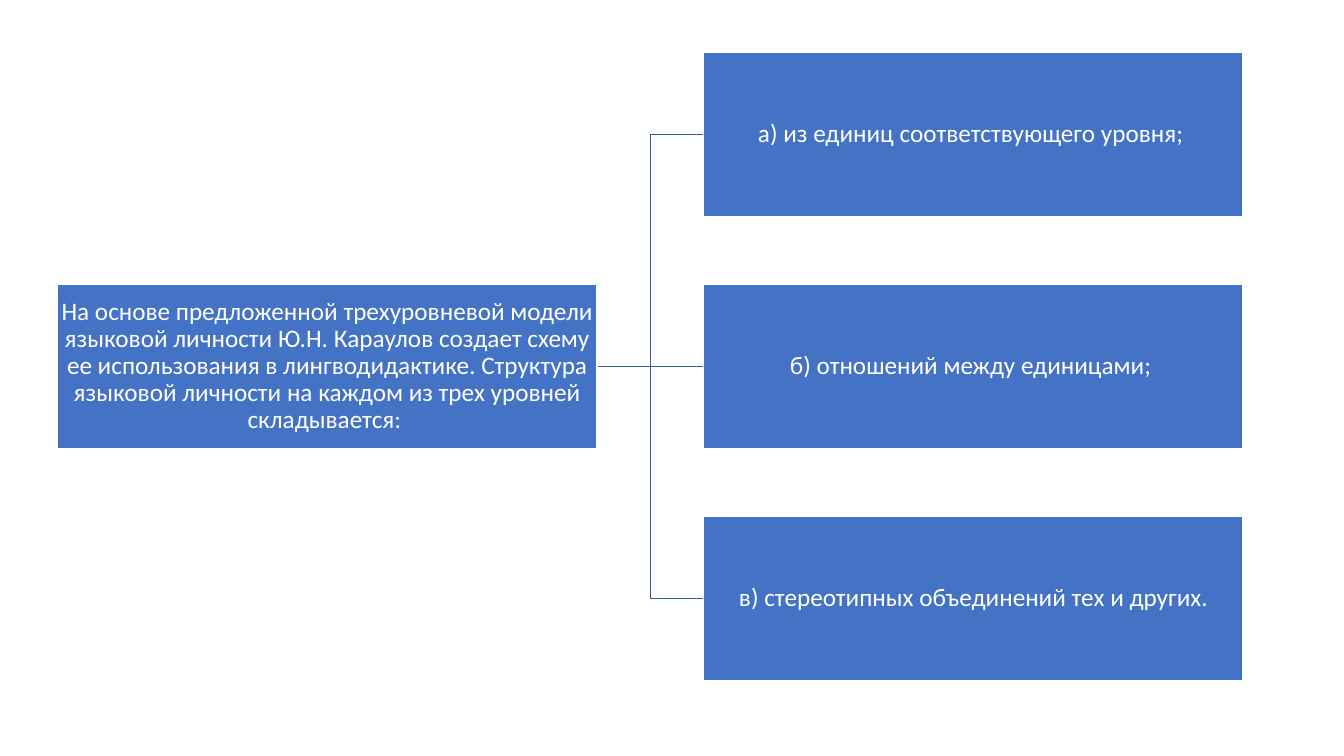
from lxml import etree
from pptx import Presentation
from pptx.dml.color import RGBColor
from pptx.enum.shapes import MSO_CONNECTOR as LINK, MSO_SHAPE as SHAPE
from pptx.enum.text import MSO_ANCHOR as ANCHOR, PP_ALIGN as ALIGN
from pptx.oxml.ns import qn
from pptx.util import Inches, Pt

COLORS = {"box": "4472C4", "link": "365B9D", "white": "FFFFFF"}
BOX_WIDTH, BOX_HEIGHT = 5.35, 1.63
ROOT_LEFT, LEVEL_LEFT = 0.57, 6.98
FIRST_TOP, ROW_STEP = 0.52, 2.3
ROOT_ROW = 1
RIGHT_SITE, LEFT_SITE = 3, 1

ROOT_TEXT = (
    "На основе предложенной трехуровневой модели языковой личности "
    "Ю.Н. Караулов создает схему ее использования в лингводидактике. "
    "Структура языковой личности на каждом из трех уровней складывается: "
)
PARTS = [
    "а) из единиц соответствующего уровня; ",
    "б) отношений между единицами; ",
    "в) стереотипных объединений тех и других.",
]

deck = Presentation()
deck.slide_width, deck.slide_height = Inches(13.33), Inches(7.5)
page = deck.slides.add_slide(deck.slide_layouts[6])


def add_box(text, left, row, size=18, font="Calibri", color="white", fill="box"):
    box = page.shapes.add_shape(
        SHAPE.RECTANGLE, Inches(left), Inches(FIRST_TOP + row * ROW_STEP),
        Inches(BOX_WIDTH), Inches(BOX_HEIGHT))
    box.shadow.inherit = False
    box.fill.solid()
    box.fill.fore_color.rgb = RGBColor.from_string(COLORS[fill])
    box.line.color.rgb = RGBColor.from_string(COLORS["white"])
    box.line.width = Pt(1)
    frame = box.text_frame
    frame.word_wrap = True
    frame.vertical_anchor = ANCHOR.MIDDLE
    frame.margin_left = frame.margin_right = Inches(0.01)
    frame.margin_top = frame.margin_bottom = Inches(0.01)
    para = frame.paragraphs[0]
    para.alignment = ALIGN.CENTER
    para.line_spacing = 0.9
    span = para.add_run()
    span.text = text
    span.font.size = Pt(size)
    span.font.name = font
    span.font.color.rgb = RGBColor.from_string(COLORS[color])
    return box


# Links come first so that the boxes' white outlines lie over their ends
links = []
root_middle = FIRST_TOP + ROOT_ROW * ROW_STEP + BOX_HEIGHT / 2
for row in range(len(PARTS)):
    link = page.shapes.add_connector(
        LINK.STRAIGHT if row == ROOT_ROW else LINK.ELBOW,
        Inches(ROOT_LEFT + BOX_WIDTH), Inches(root_middle),
        Inches(LEVEL_LEFT), Inches(root_middle + (row - ROOT_ROW) * ROW_STEP))
    link.line.color.rgb = RGBColor.from_string(COLORS["link"])
    link.line.width = Pt(1)
    etree.SubElement(link.element.spPr, qn("a:effectLst"))
    links.append(link)

root = add_box(ROOT_TEXT, ROOT_LEFT, ROOT_ROW)
for row, (text, link) in enumerate(zip(PARTS, links)):
    part = add_box(text, LEVEL_LEFT, row)
    link.begin_connect(root, RIGHT_SITE)
    link.end_connect(part, LEFT_SITE)

deck.save("out.pptx")
